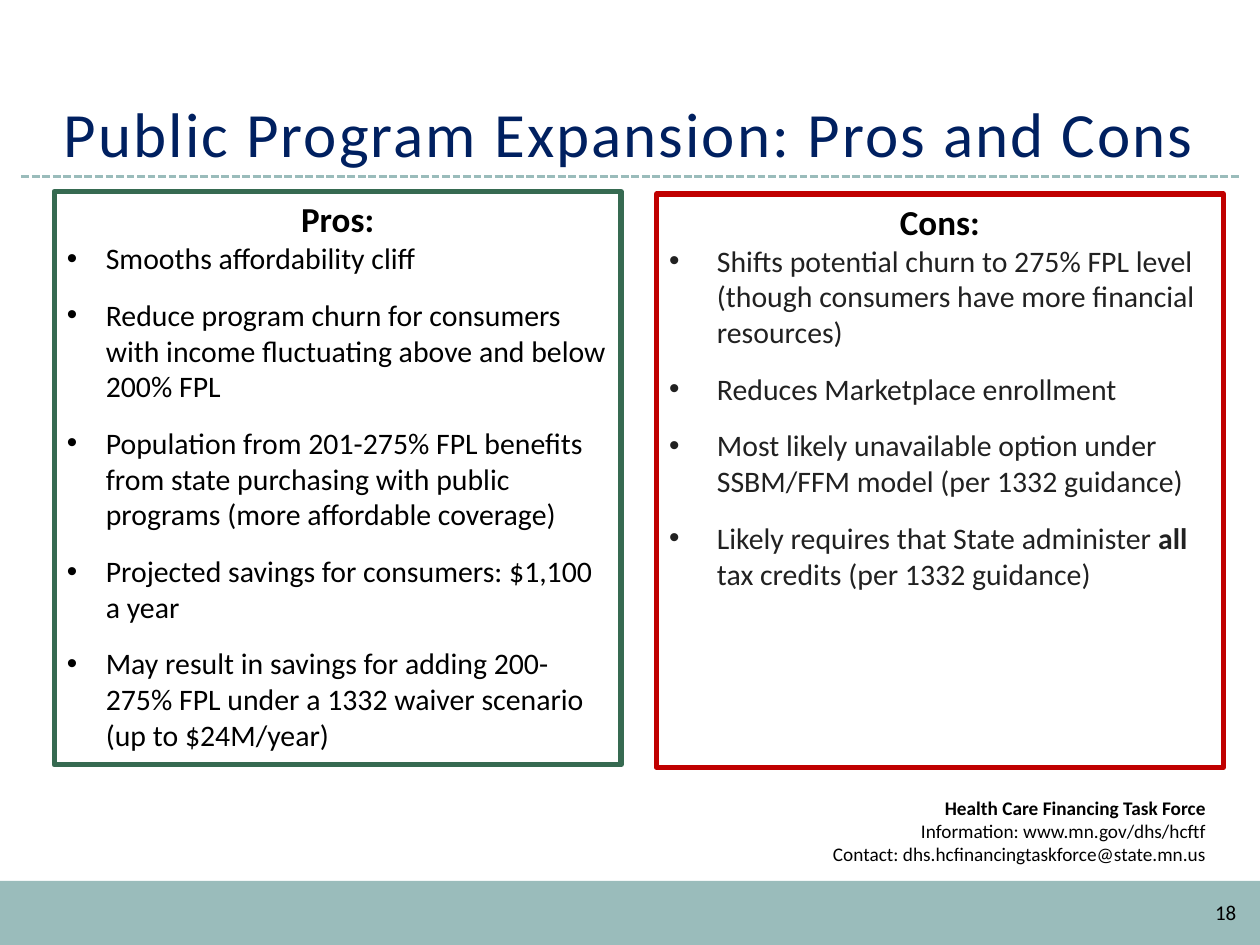
from pptx import Presentation
from pptx.dml.color import RGBColor
from pptx.enum.dml import MSO_LINE
from pptx.enum.shapes import MSO_CONNECTOR, MSO_SHAPE
from pptx.enum.text import MSO_ANCHOR, MSO_AUTO_SIZE, PP_ALIGN
from pptx.oxml.ns import qn
from pptx.util import Inches, Pt
from lxml import etree

LEFT, CENTER, RIGHT = PP_ALIGN.LEFT, PP_ALIGN.CENTER, PP_ALIGN.RIGHT
TOP, MIDDLE, BOTTOM = MSO_ANCHOR.TOP, MSO_ANCHOR.MIDDLE, MSO_ANCHOR.BOTTOM
FIXED = MSO_AUTO_SIZE.NONE
DASH = MSO_LINE.SQUARE_DOT
TEAL = "9ABCBB"


def color(code):
    return RGBColor.from_string(code)


def write(frame, text, size=17, ink="000000", bold=False, align=LEFT,
          after=0, indent=None, track=0):
    """Add a paragraph to the frame; parts between asterisks are bold."""
    par = frame.paragraphs[0]
    if par.runs:
        par = frame.add_paragraph()
    par.alignment = align
    par.space_before, par.space_after = Pt(0), Pt(after)
    props = par._p.get_or_add_pPr()
    props.set("marL", str(Inches(indent or 0)))
    props.set("indent", str(-Inches(indent or 0)))
    if indent:
        etree.SubElement(props, qn("a:buChar")).set("char", "•")
    else:
        etree.SubElement(props, qn("a:buNone"))
    for i, part in enumerate(text.split("*")):
        run = par.add_run()
        run.text = part
        font = run.font
        font.name, font.size = "Calibri", Pt(size)
        font.bold = bold or i % 2 == 1
        font.color.rgb = color(ink)
        if track:
            run._r.get_or_add_rPr().set("spc", str(track))
    return par


prs = Presentation()
prs.slide_width, prs.slide_height = Inches(10), Inches(7.5)
slide = prs.slides.add_slide(prs.slide_layouts[3])
shapes = slide.shapes
title, *bodies = slide.placeholders

# Footer band and dashed rule
band = shapes.add_shape(MSO_SHAPE.RECTANGLE, Inches(0), Inches(6.99),
                        Inches(10), Inches(0.51))
band.shadow.inherit = False
band.fill.solid()
band.fill.fore_color.rgb = color(TEAL)
band.line.fill.background()

rule = shapes.add_connector(MSO_CONNECTOR.STRAIGHT, Inches(0.17), Inches(1.4),
                            Inches(9.83), Inches(1.4))
rule.line.color.rgb = color(TEAL)
rule.line.width = Pt(1.5)
rule.line.dash_style = DASH
etree.SubElement(rule._element.spPr, qn("a:effectLst"))

# Title
title.left, title.top = Inches(0.33), Inches(0.25)
title.width, title.height = Inches(9.33), Inches(1.15)
frame = title.text_frame
frame.auto_size, frame.vertical_anchor = FIXED, BOTTOM
head = write(frame, "Public Program Expansion: Pros and Cons", size=36,
             ink="002060", align=CENTER, track=120)
head.line_spacing = Pt(40)

# Framed lists: heading, left, top, border, ink, indent, points
lists = [
    ("Pros:", 0.43, 1.52, "366A51", "000000", 0.31, [
        "Smooths affordability cliff",
        "Reduce program churn for consumers with income fluctuating above "
        "and below 200% FPL",
        "Population from 201-275% FPL benefits from state purchasing with "
        "public programs (more affordable coverage)",
        "Projected savings for consumers: $1,100 a year",
        "May result in savings for adding 200-275% FPL under a 1332 waiver "
        "scenario (up to $24M/year)",
    ]),
    ("Cons:", 5.21, 1.54, "C00000", "212121", 0.38, [
        "Shifts potential churn to 275% FPL level (though consumers have "
        "more financial resources)",
        "Reduces Marketplace enrollment",
        "Most likely unavailable option under SSBM/FFM model (per 1332 "
        "guidance)",
        "Likely requires that State administer *all* tax credits (per 1332 "
        "guidance)",
    ]),
]
for body, (name, left, top, edge, ink, indent, points) in zip(bodies, lists):
    body.left, body.top = Inches(left), Inches(top)
    body.width, body.height = Inches(4.5), Inches(4.55)
    body.fill.solid()
    body.fill.fore_color.rgb = color("FFFFFF")
    body.line.color.rgb = color(edge)
    body.line.width = Pt(3)
    frame = body.text_frame
    frame.auto_size, frame.vertical_anchor = FIXED, TOP
    write(frame, name, size=20, bold=True, align=CENTER)
    for point in points:
        write(frame, point, ink=ink, after=12, indent=indent)

# Contact details and page number
notes = [
    (4.54, 6.26, 5.13, 0.67, 11, [
        "*Health Care Financing Task Force*",
        "Information: www.mn.gov/dhs/hcftf",
        "Contact: dhs.hcfinancingtaskforce@state.mn.us",
    ]),
    (9.33, 7.04, 0.58, 0.4, 12, ["18"]),
]
for left, top, width, height, size, lines in notes:
    box = shapes.add_textbox(Inches(left), Inches(top), Inches(width),
                             Inches(height))
    frame = box.text_frame
    frame.word_wrap, frame.vertical_anchor = True, MIDDLE
    for line in lines:
        write(frame, line, size=size, align=RIGHT)

prs.save("out.pptx")
